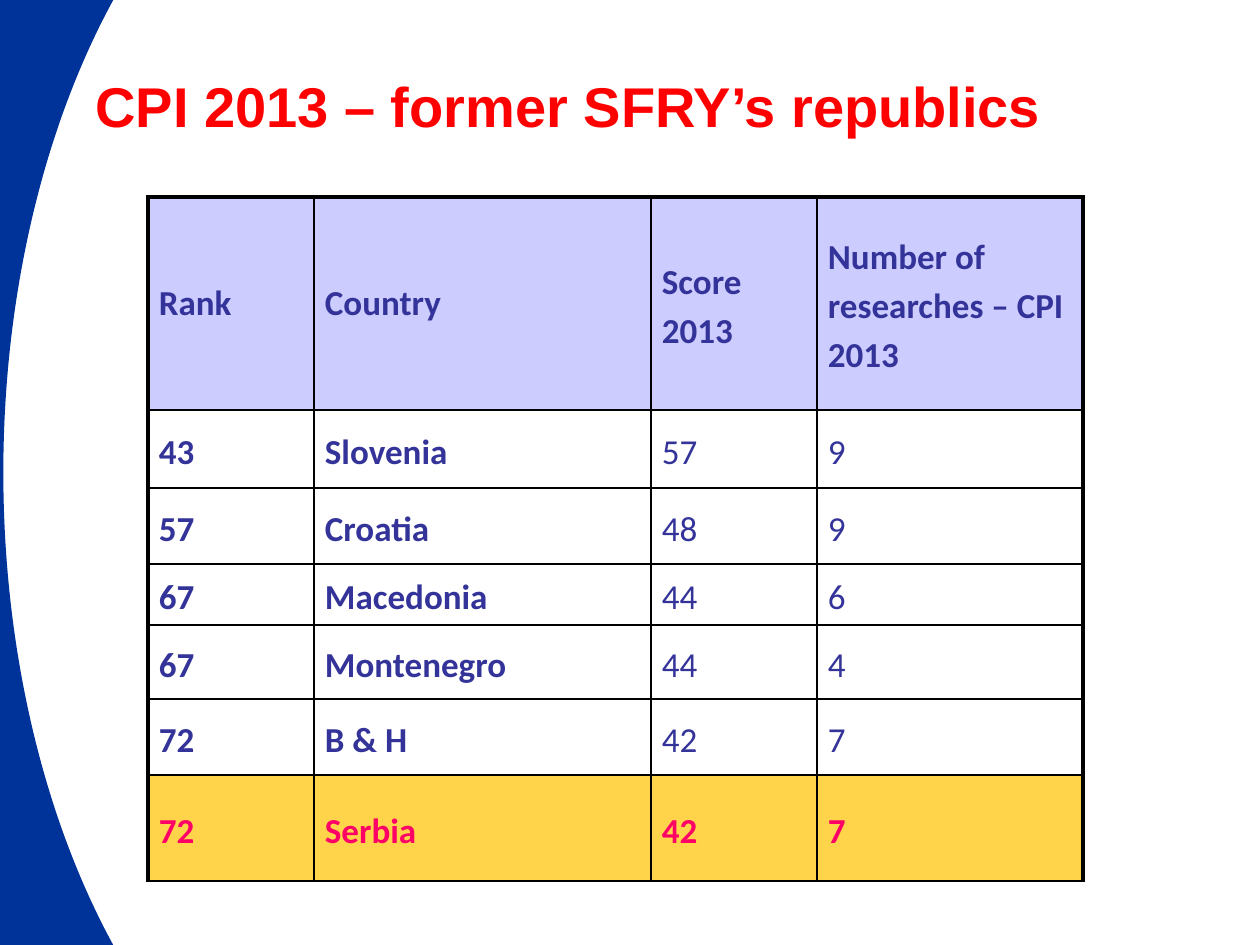
from lxml import etree
from pptx import Presentation
from pptx import util as u
from pptx.dml.color import RGBColor
from pptx.enum import shapes, text
from pptx.oxml.ns import qn

# Content
TITLE = "CPI 2013 – former SFRY’s republics"
ROWS = [
    ("Rank", "Country", "Score 2013", "Number of researches – CPI 2013"),
    ("43", "Slovenia", "57", "9"),
    ("57", "Croatia", "48", "9"),
    ("67", "Macedonia", "44", "6"),
    ("67", "Montenegro", "44", "4"),
    ("72", "B & H", "42", "7"),
    ("72", "Serbia", "42", "7"),
]

# Layout in px, 126 to the inch
PX = u.Inches(1) / 126
COLUMN_WIDTHS = [166, 337, 166, 266]
ROW_HEIGHTS = [213, 78, 76, 61, 74, 76, 106]
TABLE_LEFT, TABLE_TOP = 148, 197
THIN, THICK = 1, 2.25

BLUE, RED, INK, PINK = "003399", "FF0000", "333399", "FF0066"
LILAC, GOLD, BLACK = "CCCCFF", "FFD44B", "000000"


def px(*lengths):
    return [u.Emu(round(length * PX)) for length in lengths]


def color(value):
    return RGBColor.from_string(value)


def add_span(para, words, font, size, ink, bold):
    span = para.add_run()
    span.text = words
    span.font.name, span.font.size, span.font.bold = font, u.Pt(size), bold
    span.font.color.rgb = color(ink)


def set_borders(cell, widths):
    properties = cell._tc.get_or_add_tcPr()
    for side, width in widths.items():
        line = etree.SubElement(properties, qn(f"a:ln{side}"), w=str(u.Pt(width)))
        fill = etree.SubElement(line, qn("a:solidFill"))
        etree.SubElement(fill, qn("a:srgbClr"), val=BLACK)


def add_moon(page):
    moon = page.shapes.add_shape(shapes.MSO_SHAPE.MOON, *px(-168, -84, 336, 1113))
    moon.adjustments[0] = 0.51
    moon.shadow.inherit = False
    moon.fill.solid()
    moon.fill.fore_color.rgb = color(BLUE)
    moon.line.fill.background()


def add_title(page):
    box = page.shapes.add_textbox(*px(0, 59, 1137, 100))
    box.text_frame.word_wrap = True
    para = box.text_frame.paragraphs[0]
    para.alignment = text.PP_ALIGN.CENTER
    para.line_spacing = u.Pt(42)
    add_span(para, TITLE, "Arial", 32, RED, True)


def fill_cell(cell, words, row, column):
    first, last = row == 0, row == len(ROWS) - 1
    set_borders(cell, {
        "L": THICK if column == 0 else THIN,
        "R": THICK if column == len(COLUMN_WIDTHS) - 1 else THIN,
        "T": THICK if first else THIN,
        "B": THIN,
    })
    if first or last:
        cell.fill.solid()
        cell.fill.fore_color.rgb = color(LILAC if first else GOLD)
    else:
        cell.fill.background()
    cell.vertical_anchor = text.MSO_ANCHOR.MIDDLE
    cell.margin_left, cell.margin_right, cell.margin_top, cell.margin_bottom = px(11, 11, 6, 6)
    para = cell.text_frame.paragraphs[0]
    if not first or column >= 2:
        para.line_spacing = 1.15
        para.space_after = u.Pt(10)
    bold = first or last or column < 2
    add_span(para, words, "Calibri", 20, PINK if last else INK, bold)


def add_ranking(page):
    frame = page.shapes.add_table(
        len(ROWS), len(COLUMN_WIDTHS),
        *px(TABLE_LEFT, TABLE_TOP, sum(COLUMN_WIDTHS), sum(ROW_HEIGHTS)))
    table = frame.table
    table.horz_banding = table.first_row = False
    for column, width in zip(table.columns, px(*COLUMN_WIDTHS)):
        column.width = width
    for row, height in zip(table.rows, px(*ROW_HEIGHTS)):
        row.height = height
    for row, entries in enumerate(ROWS):
        for column, words in enumerate(entries):
            fill_cell(table.cell(row, column), words, row, column)


def main():
    deck = Presentation()
    deck.slide_width, deck.slide_height = px(1260, 945)
    page = deck.slides.add_slide(deck.slide_layouts[6])
    add_moon(page)
    add_title(page)
    add_ranking(page)
    deck.save("out.pptx")


if __name__ == "__main__":
    main()
